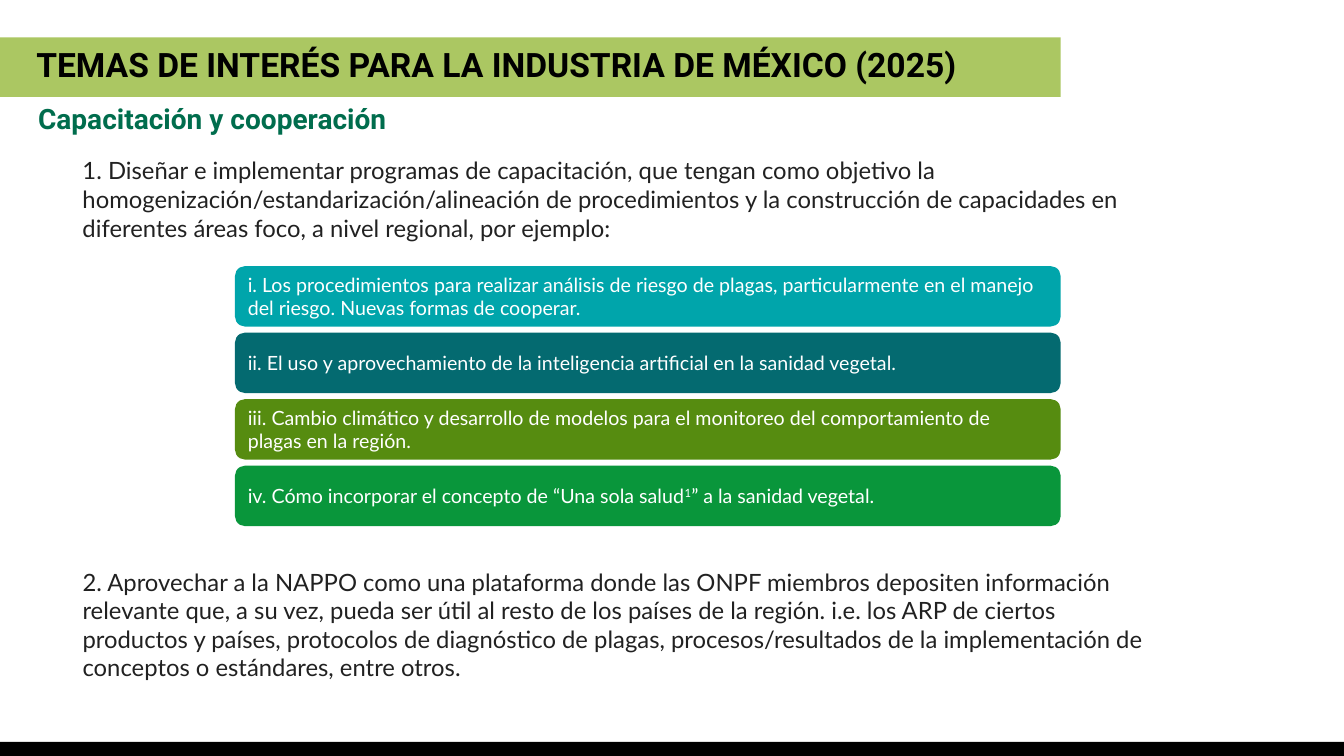
from lxml.etree import SubElement
from pptx import Presentation
from pptx.dml.color import RGBColor
from pptx.enum.shapes import MSO_SHAPE
from pptx.enum.text import MSO_ANCHOR, MSO_AUTO_SIZE, PP_ALIGN
from pptx.oxml.ns import qn
from pptx.util import Inches, Pt

COLORS = {
    "banner": "ABC762",
    "black": "000000",
    "heading": "006D4D",
    "body": "212121",
    "white": "FFFFFF",
    "turquoise": "00A5AB",
    "teal": "046A70",
    "olive": "568C10",
    "green": "09963B",
}


def rgb(name):
    return RGBColor.from_string(COLORS[name])


def add_run(p, text, font="Lato", size=14, color="white", bold=False, superscript=False):
    r = p.add_run()
    r.text = text
    r.font.name = font
    r.font.size = Pt(size)
    r.font.bold = bold
    r.font.color.rgb = rgb(color)
    if superscript:
        r._r.get_or_add_rPr().set("baseline", "30000")


class SlideBuilder:
    def __init__(self, prs):
        self.s = prs.slides.add_slide(prs.slide_layouts[5])

    def title(self, text, x, y, w, h):
        sp = self.s.shapes.title
        sp.left, sp.top, sp.width, sp.height = map(Inches, (x, y, w, h))
        tf = sp.text_frame
        tf.word_wrap = True
        tf.auto_size = MSO_AUTO_SIZE.NONE
        tf.vertical_anchor = MSO_ANCHOR.MIDDLE
        p = tf.paragraphs[0]
        p.alignment = PP_ALIGN.LEFT
        p.line_spacing = 0.9
        add_run(p, text, font="Roboto", size=24, color="black", bold=True)

    def box(self, x, y, w, h, fill, shape=MSO_SHAPE.RECTANGLE):
        sp = self.s.shapes.add_shape(shape, *map(Inches, (x, y, w, h)))
        sp.shadow.inherit = False
        sp.fill.solid()
        sp.fill.fore_color.rgb = rgb(fill)
        sp.line.fill.background()
        return sp

    def banner(self, x, y, w, h):
        sp = self.box(x, y, w, h, "banner")
        self.s.shapes.title.element.addprevious(sp.element)

    def card(self, x, y, w, h, fill, runs):
        sp = self.box(x, y, w, h, fill, MSO_SHAPE.ROUNDED_RECTANGLE)
        tf = sp.text_frame
        tf.word_wrap = True
        tf.vertical_anchor = MSO_ANCHOR.MIDDLE
        p = tf.paragraphs[0]
        p.alignment = PP_ALIGN.LEFT
        for text, superscript in runs:
            add_run(p, text, superscript=superscript)

    def text(self, text, x, y, w, h, number=None, **style):
        tf = self.s.shapes.add_textbox(*map(Inches, (x, y, w, h))).text_frame
        tf.word_wrap = True
        tf.auto_size = MSO_AUTO_SIZE.SHAPE_TO_FIT_TEXT
        p = tf.paragraphs[0]
        if number:
            pPr = p._p.get_or_add_pPr()
            SubElement(pPr, qn("a:buAutoNum"), type="arabicPeriod", startAt=str(number))
        add_run(p, text, **style)


def main():
    prs = Presentation()
    prs.slide_width, prs.slide_height = Inches(13.33), Inches(7.5)
    slide = SlideBuilder(prs)

    slide.banner(0, 0.37, 10.52, 0.59)
    slide.title("TEMAS DE INTERÉS PARA LA INDUSTRIA DE MÉXICO (2025)", 0.26, 0.02, 10.96, 1.29)
    slide.box(0, 7.36, 13.33, 0.14, "black")
    slide.text("Capacitación y cooperación", 0.28, 0.96, 6.67, 0.44,
               font="Roboto", size=20, color="heading", bold=True)

    topics = [
        (1.5, 11.46, 0.96,
         " Diseñar e implementar programas de capacitación, que tengan como objetivo la "
         "homogenización/estandarización/alineación de procedimientos y la construcción de "
         "capacidades en diferentes áreas foco, a nivel regional, por ejemplo:"),
        (5.58, 10.72, 1.25,
         " Aprovechar a la NAPPO como una plataforma donde las ONPF miembros depositen "
         "información relevante que, a su vez, pueda ser útil al resto de los países de la "
         "región. i.e. los ARP de ciertos productos y países, protocolos de diagnóstico de "
         "plagas, procesos/resultados de la implementación de conceptos o estándares, entre otros."),
    ]
    for number, (y, w, h, text) in enumerate(topics, 1):
        slide.text(text, 0.72, y, w, h, number=number, size=17, color="body")

    examples = [
        ("turquoise", [("i. Los procedimientos para realizar análisis de riesgo de plagas, "
                        "particularmente en el manejo del riesgo. Nuevas formas de cooperar.", False)]),
        ("teal", [("ii. El uso y aprovechamiento de la inteligencia artificial en la "
                   "sanidad vegetal.", False)]),
        ("olive", [("iii. Cambio climático y desarrollo de modelos para el monitoreo del "
                    "comportamiento de plagas en la región.", False)]),
        ("green", [("iv. Cómo incorporar el concepto de “Una sola salud", False),
                   ("1", True), ("” a la sanidad vegetal.", False)]),
    ]
    for i, (fill, runs) in enumerate(examples):
        slide.card(2.33, 2.64 + 0.66 * i, 8.19, 0.6, fill, runs)

    prs.save("out.pptx")


if __name__ == "__main__":
    main()
